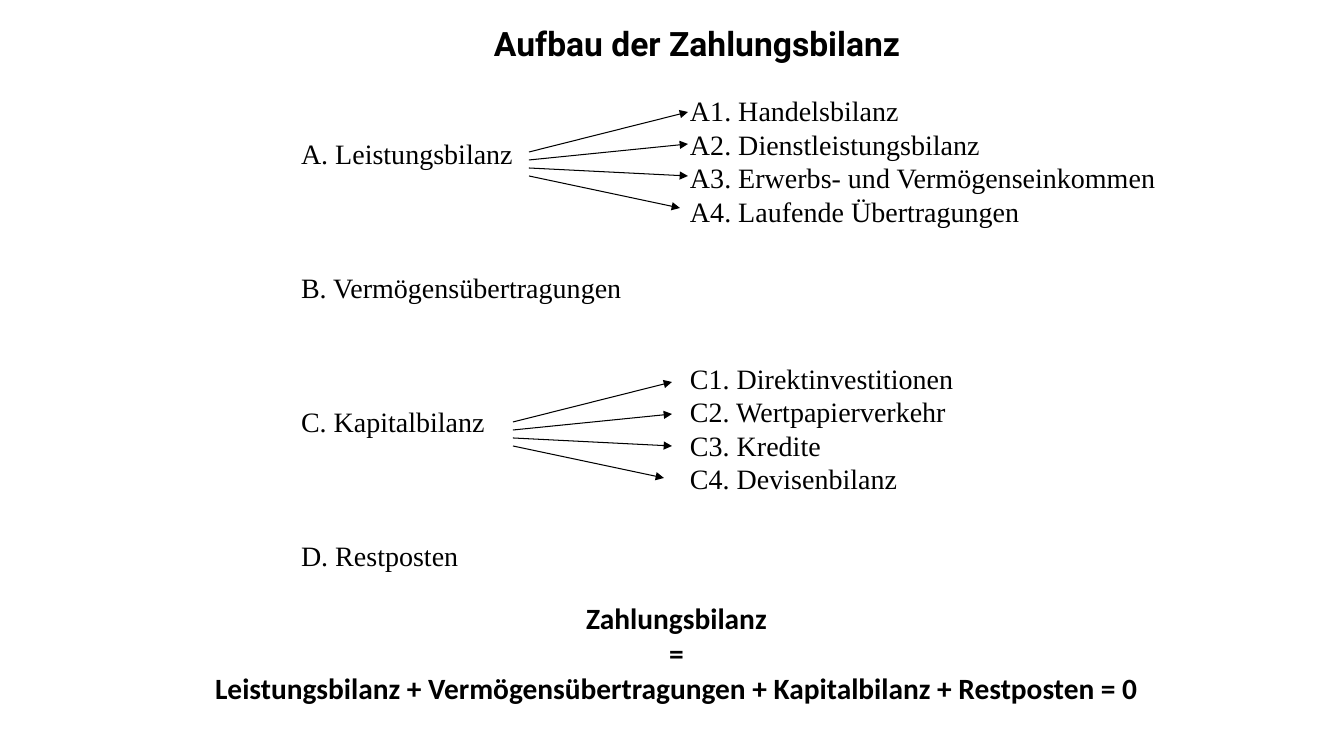
from lxml.etree import SubElement
from pptx import Presentation
from pptx.dml.color import RGBColor
from pptx.enum.shapes import MSO_CONNECTOR
from pptx.enum.text import MSO_ANCHOR, PP_ALIGN
from pptx.oxml.ns import qn
from pptx.util import Emu, Pt

PX_PER_INCH = 100.8
BLACK = "000000"
LINE_PITCH = 23.9  # points between lines of the outline

# Each entry: text and the number of free lines above it
MAIN_ITEMS = [
    ("A. Leistungsbilanz", 0),
    ("B. Vermögensübertragungen", 3),
    ("C. Kapitalbilanz", 3),
    ("D. Restposten", 3),
]
SUB_ITEMS = [
    ("A1. Handelsbilanz", 0),
    ("A2. Dienstleistungsbilanz", 0),
    ("A3. Erwerbs- und Vermögenseinkommen", 0),
    ("A4. Laufende Übertragungen", 0),
    ("C1. Direktinvestitionen", 4),
    ("C2. Wertpapierverkehr", 0),
    ("C3. Kredite", 0),
    ("C4. Devisenbilanz", 0),
]
EQUATION = [
    "Zahlungsbilanz",
    "=",
    "Leistungsbilanz + Vermögensübertragungen + Kapitalbilanz + Restposten = 0",
]


def px(length):
    return Emu(round(length * 914400 / PX_PER_INCH))


def color(hex_text):
    return RGBColor.from_string(hex_text)


def add_text(page, left, top, width, height, lines, font, size, bold=False,
             align=PP_ALIGN.LEFT, anchor=MSO_ANCHOR.TOP):
    """Add a text box with one paragraph per line and return its paragraphs."""
    box = page.shapes.add_textbox(px(left), px(top), px(width), px(height))
    frame = box.text_frame
    frame.word_wrap = True
    frame.vertical_anchor = anchor
    frame.margin_left = frame.margin_right = 0
    frame.margin_top = frame.margin_bottom = 0
    frame.text = "\n".join(lines)
    for para in frame.paragraphs:
        para.alignment = align
        para.font.name = font
        para.font.size = Pt(size)
        para.font.bold = bold
        para.font.color.rgb = color(BLACK)
    return frame.paragraphs


def add_outline(page, left, top, width, height, items):
    """Add a column of items on a common line grid."""
    lines = [text for text, _ in items]
    paras = add_text(page, left, top, width, height, lines, "Times New Roman", 20)
    for para, (_, free_lines) in zip(paras, items):
        para.line_spacing = Pt(LINE_PITCH)
        para.space_before = Pt(free_lines * LINE_PITCH)


def add_arrow(page, start_x, start_y, end_x, end_y):
    arrow = page.shapes.add_connector(
        MSO_CONNECTOR.STRAIGHT, px(start_x), px(start_y), px(end_x), px(end_y))
    arrow.line.color.rgb = color(BLACK)
    arrow.line.width = Pt(0.75)
    SubElement(arrow.line._get_or_add_ln(), qn("a:tailEnd"), type="triangle")
    SubElement(arrow._element.spPr, qn("a:effectLst"))


def add_arrow_fan(page, left, top):
    """Add four arrows that spread to the right; the last is shorter."""
    for index in range(4):
        length = 151 if index == 3 else 159
        add_arrow(page, left, top + 40 + 8 * index,
                  left + length, top + 32 * index)


def main():
    deck = Presentation()
    deck.slide_width, deck.slide_height = px(1344), px(756)
    page = deck.slides.add_slide(deck.slide_layouts[6])

    # Title
    add_text(page, 494, 18, 620, 51, ["Aufbau der Zahlungsbilanz"],
             "Roboto", 24, bold=True, anchor=MSO_ANCHOR.MIDDLE)

    # Accounts and their parts
    add_outline(page, 301, 137, 353, 436, MAIN_ITEMS)
    add_outline(page, 690, 94, 480, 402, SUB_ITEMS)

    # Arrows from accounts to parts
    add_arrow_fan(page, 529, 112)
    add_arrow_fan(page, 513, 382)

    # Balance equation
    add_text(page, 201, 600, 951, 107, EQUATION, "Calibri", 21,
             bold=True, align=PP_ALIGN.CENTER)

    deck.save("out.pptx")


if __name__ == "__main__":
    main()
